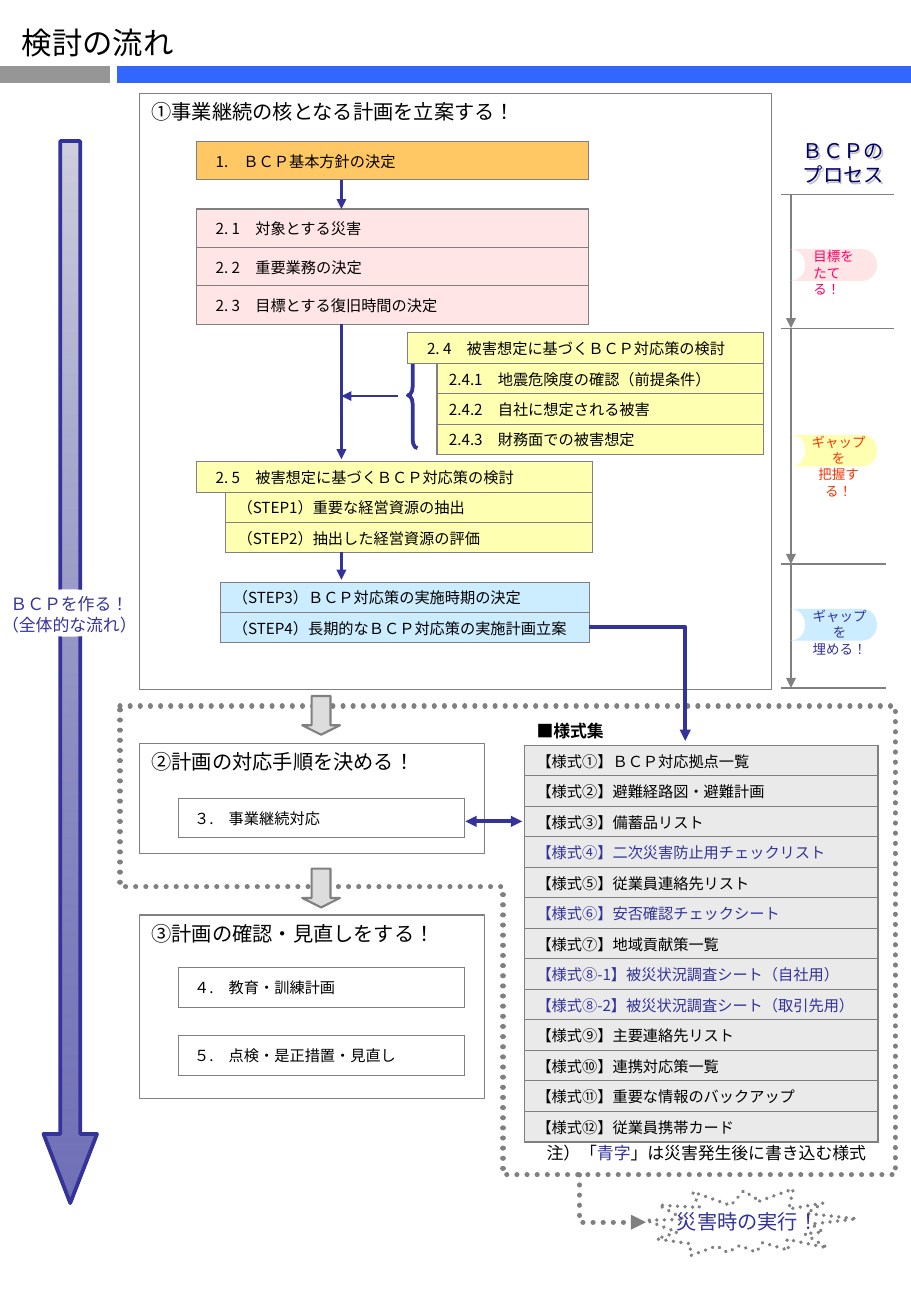
"""Build the one-page overview of how a business continuity plan is drawn up."""
from itertools import pairwise
from typing import NamedTuple, Optional

from lxml.etree import SubElement
from pptx import Presentation
from pptx.dml.color import RGBColor
from pptx.enum.dml import MSO_LINE
from pptx.enum.lang import MSO_LANGUAGE_ID
from pptx.enum.shapes import MSO_CONNECTOR, MSO_SHAPE
from pptx.enum.text import MSO_ANCHOR, PP_ALIGN
from pptx.oxml.ns import qn
from pptx.util import Cm, Pt

BLACK, WHITE, GRAY = map(RGBColor.from_string, ("000000", "FFFFFF", "808080"))
BAR_GRAY, BAR_BLUE, ARROW_GRAY = map(RGBColor.from_string, ("969696", "3366FF", "DDDDDD"))
NAVY, DARK_NAVY, LAVENDER = map(RGBColor.from_string, ("333399", "000066", "CECEDE"))
ORANGE, PINK, YELLOW = map(RGBColor.from_string, ("FFC864", "FFE5E5", "FFFFB2"))
SKY, FORM_GRAY, MAGENTA, RED = map(RGBColor.from_string, ("CCECFF", "EAEAEA", "FF0066", "FF3300"))
NOTO, ARIAL = "Noto Sans CJK JP", "Arial"
NO_STYLE = "{2D5ABB26-0587-4C30-8999-92F81FD0307C}"
ALL_SIDES = ("L", "R", "T", "B")
FLOW_X, PROCESS_X = 7.14, 16.54

class Box(NamedTuple):
    left: float
    top: float
    width: float
    height: float

class Style(NamedTuple):
    size: float
    colour: RGBColor = BLACK
    font: str = NOTO
    align: PP_ALIGN = PP_ALIGN.LEFT
    bold: bool = False

class Stack(NamedTuple):
    box: Box
    fill: RGBColor
    rows: list[str]
    margin: float = 0.25
    indent: float = 0

class Stage(NamedTuple):
    top: float
    text: str
    fill: RGBColor
    text_left: float
    text_width: float
    style: Style

PANELS = [(Box(2.92, 1.96, 13.21, 12.45), "①事業継続の核となる計画を立案する！"),
          (Box(2.92, 19.13, 7.21, 3.84), "③計画の確認・見直しをする！"),
          (Box(2.92, 15.54, 7.21, 2.31), "②計画の対応手順を決める！")]
STACKS = [
    Stack(Box(4.11, 2.95, 8.2, 0.81), ORANGE, ["1.　ＢＣＰ基本方針の決定"], 0.4),
    Stack(Box(4.11, 4.37, 8.2, 2.41), PINK,
          ["2. 1　対象とする災害", "2. 2　重要業務の決定", "2. 3　目標とする復旧時間の決定"], 0.4),
    Stack(Box(4.11, 9.65, 8.28, 1.91), YELLOW, ["2. 5　被害想定に基づくＢＣＰ対応策の検討",
          "（STEP1）重要な経営資源の抽出", "（STEP2）抽出した経営資源の評価"], 0.4, 0.6),
    Stack(Box(8.53, 6.96, 7.42, 2.54), YELLOW,
          ["2. 4　被害想定に基づくＢＣＰ対応策の検討", "2.4.1　地震危険度の確認（前提条件）",
           "2.4.2　自社に想定される被害", "2.4.3　財務面での被害想定"], 0.4, 0.6),
    Stack(Box(4.62, 12.17, 7.7, 1.27), SKY,
          ["（STEP3）ＢＣＰ対応策の実施時期の決定", "（STEP4）長期的なＢＣＰ対応策の実施計画立案"]),
    Stack(Box(3.73, 16.69, 5.99, 0.81), WHITE, ["３.　事業継続対応"], 0.33),
    Stack(Box(3.73, 20.22, 5.99, 0.84), WHITE, ["４.　教育・訓練計画"], 0.33),
    Stack(Box(3.73, 21.64, 5.99, 0.84), WHITE, ["５.　点検・是正措置・見直し"], 0.33)]
FORMS = Stack(Box(10.97, 14.94, 7.39, 8.94), FORM_GRAY, [
    "■様式集", "【様式①】ＢＣＰ対応拠点一覧", "【様式②】避難経路図・避難計画", "【様式③】備蓄品リスト",
    "【様式④】二次災害防止用チェックリスト", "【様式⑤】従業員連絡先リスト", "【様式⑥】安否確認チェックシート",
    "【様式⑦】地域貢献策一覧", "【様式⑧-1】被災状況調査シート（自社用）", "【様式⑧-2】被災状況調査シート（取引先用）",
    "【様式⑨】主要連絡先リスト", "【様式⑩】連携対応策一覧", "【様式⑪】重要な情報のバックアップ", "【様式⑫】従業員携帯カード"])
AFTER_DISASTER_ROWS = (4, 6, 8, 9)
STAGES = [Stage(5.21, "目標を\nたてる！", PINK, 16.76, 1.43, Style(8, MAGENTA, ARIAL)),
          Stage(9.09, "ギャップを\n把握する！", YELLOW, 16.67, 1.74, Style(8, RED, ARIAL, PP_ALIGN.CENTER)),
          Stage(12.73, "ギャップを\n埋める！", SKY, 16.69, 1.74, Style(8, NAVY, ARIAL, PP_ALIGN.CENTER))]
STAGE_BOUNDS = [(4.06, 18.69), (6.86, 18.69), (11.79, 18.52), (14.38, 18.52)]

def format_text(text_frame, style: Style) -> None:
    for paragraph in text_frame.paragraphs:
        paragraph.alignment = style.align
        for run in paragraph.runs:
            font = run.font
            font.size, font.bold, font.name = Pt(style.size), style.bold, style.font
            font.language_id = MSO_LANGUAGE_ID.JAPANESE
            font.color.rgb = style.colour
            if font._element.find(qn("a:ea")) is None:
                east_asian = font._element.makeelement(qn("a:ea"), {"typeface": NOTO})
                font._element.find(qn("a:latin")).addnext(east_asian)

def add_text(slide, box: Box, text: str, style: Style, wrap: bool = True):
    shape = slide.shapes.add_textbox(*map(Cm, box))
    shape.text_frame.word_wrap = wrap
    shape.text_frame.text = text
    format_text(shape.text_frame, style)
    return shape

def style_line(shape, colour: RGBColor, width: float, ends: tuple = (), dotted: bool = False) -> None:
    shape.line.color.rgb, shape.line.width = colour, Pt(width)
    outline = shape.line._get_or_add_ln()
    if dotted:
        shape.line.dash_style = MSO_LINE.ROUND_DOT
        outline.set("cap", "rnd")
    for end in ends:
        SubElement(outline, qn(f"a:{end}"), type="triangle")

def add_line(slide, start: tuple, end: tuple, colour: RGBColor, width: float, ends: tuple = ()) -> None:
    line = slide.shapes.add_connector(MSO_CONNECTOR.STRAIGHT, *map(Cm, (*start, *end)))
    style_line(line, colour, width, ends)
    SubElement(line._element.spPr, qn("a:effectLst"))

def add_shape(slide, kind: MSO_SHAPE, box: Box, fill: RGBColor, line: Optional[RGBColor] = None,
              width: float = 0.75, adjustments: tuple = ()):
    shape = slide.shapes.add_shape(kind, *map(Cm, box))
    shape.shadow.inherit = False
    for index, value in enumerate(adjustments):
        shape.adjustments[index] = value
    shape.fill.solid()
    shape.fill.fore_color.rgb = fill
    shape.line.fill.background()
    if line is not None:
        style_line(shape, line, width)
    return shape

def add_path(slide, points: list, colour: RGBColor, width: float, ends: tuple = (),
             dotted: bool = False, closed: bool = False) -> None:
    corners = [(Cm(x), Cm(y)) for x, y in points]
    builder = slide.shapes.build_freeform(*corners[0])
    shape = builder.add_line_segments(corners[1:], close=closed).convert_to_shape()
    shape.shadow.inherit = False
    shape.fill.background()
    style_line(shape, colour, width, ends, dotted)

def set_borders(cell, visible: tuple) -> None:
    properties = cell._tc.get_or_add_tcPr()
    for index, side in enumerate(ALL_SIDES):
        border = properties.makeelement(qn(f"a:ln{side}"), {"w": str(Pt(0.75))})
        paint = SubElement(border, qn("a:solidFill" if side in visible else "a:noFill"))
        if side in visible:
            SubElement(paint, qn("a:srgbClr"), val=str(GRAY))
        properties.insert(index, border)

def add_stack(slide, stack: Stack, headed: bool = False):
    table = slide.shapes.add_table(len(stack.rows), 2 if stack.indent else 1, *map(Cm, stack.box)).table
    table.first_row = table.horz_banding = False
    table._tbl.tblPr.find(qn("a:tableStyleId")).text = NO_STYLE
    if stack.indent:
        table.columns[0].width, table.columns[1].width = Cm(stack.indent), Cm(stack.box.width - stack.indent)
        table.cell(0, 0).merge(table.cell(0, 1))
        for cell in table.iter_cells():
            cell.margin_top = cell.margin_bottom = 0
            SubElement(cell.text_frame.paragraphs[0]._p, qn("a:endParaRPr"), sz="800")
    for index, text in enumerate(stack.rows):
        table.rows[index].height = Cm(stack.box.height / len(stack.rows))
        is_sub, is_heading = bool(stack.indent and index), headed and index == 0
        cell = table.cell(index, int(is_sub))
        cell.text_frame.text = text
        cell.vertical_anchor = MSO_ANCHOR.MIDDLE
        cell.margin_top = cell.margin_bottom = 0
        cell.margin_left = Cm(0.25 if is_sub else stack.margin)
        cell.fill.solid()
        cell.fill.fore_color.rgb = WHITE if is_heading else stack.fill
        set_borders(cell, ("B",) if is_heading else ALL_SIDES)
        format_text(cell.text_frame, Style(9))
    return table

def add_title(slide) -> None:
    title = slide.shapes.title
    title.left, title.top, title.width, title.height = map(Cm, Box(0.2, 0.38, 6, 1.02))
    title.text_frame.text = "検討の流れ"
    title.text_frame.vertical_anchor = MSO_ANCHOR.TOP
    format_text(title.text_frame, Style(18, font=ARIAL))
    add_line(slide, (0, 1.55), (2.29, 1.55), BAR_GRAY, 10)
    add_line(slide, (2.44, 1.55), (19.05, 1.55), BAR_BLUE, 10)

def add_panels(slide) -> None:
    seal = add_shape(slide, MSO_SHAPE.EXPLOSION2, Box(13.51, 24.77, 4.39, 1.6), WHITE)
    seal.rotation = 5.6
    style_line(seal, GRAY, 2.25, dotted=True)
    region = [(2.51, 14.76), (18.72, 14.76), (18.72, 24.56), (10.52, 24.56), (10.52, 18.54), (2.51, 18.54)]
    add_path(slide, region, GRAY, 3, dotted=True, closed=True)
    for box, text in PANELS:
        panel = add_shape(slide, MSO_SHAPE.RECTANGLE, box, WHITE, GRAY)
        panel.text_frame.text, panel.text_frame.vertical_anchor = text, MSO_ANCHOR.TOP
        format_text(panel.text_frame, Style(12))
    for top in (14.55, 18.16):
        add_shape(slide, MSO_SHAPE.DOWN_ARROW, Box(6.32, top, 0.79, 0.81), ARROW_GRAY, GRAY, 1.25, (0.5, 0.25))

def add_flow(slide) -> None:
    add_shape(slide, MSO_SHAPE.LEFT_BRACE, Box(8.53, 7.16, 0.2, 2.21), WHITE, NAVY, 2.25, (0.9, 0.5))
    for stack in STACKS:
        add_stack(slide, stack)
    forms = add_stack(slide, FORMS, headed=True)
    format_text(forms.cell(0, 0).text_frame, Style(10, font=ARIAL, bold=True))
    for row in AFTER_DISASTER_ROWS:
        format_text(forms.cell(row, 0).text_frame, Style(9, NAVY))
    for top, bottom in ((3.76, 4.37), (6.78, 9.6), (11.53, 12.12)):
        add_line(slide, (FLOW_X, top), (FLOW_X, bottom), NAVY, 1.5, ("tailEnd",))
    add_line(slide, (8.33, 8.28), (FLOW_X, 8.28), NAVY, 1.5, ("tailEnd",))
    add_line(slide, (9.73, 17.17), (10.92, 17.17), NAVY, 2.25, ("headEnd", "tailEnd"))
    add_path(slide, [(12.32, 13.11), (14.33, 13.11), (14.33, 15.49)], NAVY, 2.25, ("tailEnd",))
    add_path(slide, [(12.12, 24.56), (12.12, 25.55), (13.51, 25.55)], GRAY, 3, ("tailEnd",), True)
    note = add_text(slide, Box(11.18, 23.77, 7.21, 0.69), "注）「", Style(10), wrap=False).text_frame
    for text in ("青字", "」は災害発生後に書き込む様式"):
        note.paragraphs[0].add_run().text = text
    format_text(note, Style(10, font=ARIAL))
    note.paragraphs[0].runs[1].font.color.rgb = NAVY
    add_text(slide, Box(13.54, 25.15, 4.19, 0.76), "災害時の実行！", Style(12, NAVY, align=PP_ALIGN.CENTER))

def add_process(slide) -> None:
    heading = add_text(slide, Box(PROCESS_X, 2.77, 2.39, 1.27), "ＢＣＰの\nプロセス", Style(12, DARK_NAVY))
    effects = SubElement(heading._element.spPr, qn("a:effectLst"))
    shadow = SubElement(effects, qn("a:outerShdw"), dist="17961", dir="2700000")
    SubElement(shadow, qn("a:srgbClr"), val="C0C0C0")
    for (top, _), (bottom, _) in pairwise(STAGE_BOUNDS):
        add_line(slide, (PROCESS_X, top), (PROCESS_X, bottom), GRAY, 1, ("tailEnd",))
    for top, right in STAGE_BOUNDS:
        add_line(slide, (right, top), (16.33, top), GRAY, 0.75)
    for stage in STAGES:
        tag = add_shape(slide, MSO_SHAPE.FLOWCHART_STORED_DATA, Box(PROCESS_X, stage.top, 1.8, 0.66), stage.fill)
        tag.rotation = 180
        text_box = Box(stage.text_left, stage.top - 0.14, stage.text_width, 0.94)
        add_text(slide, text_box, stage.text, stage.style)

def add_overall_arrow(slide) -> None:
    arrow = add_shape(slide, MSO_SHAPE.DOWN_ARROW, Box(0.91, 2.95, 1.12, 22.2), WHITE, NAVY, 2.25, (0.37, 1.29))
    arrow.fill.gradient()
    arrow.fill.gradient_angle = 270
    for stop, colour in zip(arrow.fill.gradient_stops, (LAVENDER, NAVY)):
        stop.color.rgb = colour
    SubElement(arrow._element.spPr.findall(".//" + qn("a:gs"))[-1][0], qn("a:alpha"), val="70000")
    add_shape(slide, MSO_SHAPE.OVAL, Box(0.08, 12.32, 2.72, 0.99), WHITE)
    label = Style(10, NAVY, align=PP_ALIGN.CENTER)
    add_text(slide, Box(-0.25, 12.29, 3.4, 1.09), "ＢＣＰを作る！\n（全体的な流れ）", label)

def main() -> None:
    presentation = Presentation()
    presentation.slide_width, presentation.slide_height = Cm(19.05), Cm(27.51)
    slide = presentation.slides.add_slide(presentation.slide_layouts[5])
    for add_part in (add_title, add_panels, add_flow, add_process, add_overall_arrow):
        add_part(slide)
    presentation.save("out.pptx")

if __name__ == "__main__":
    main()
